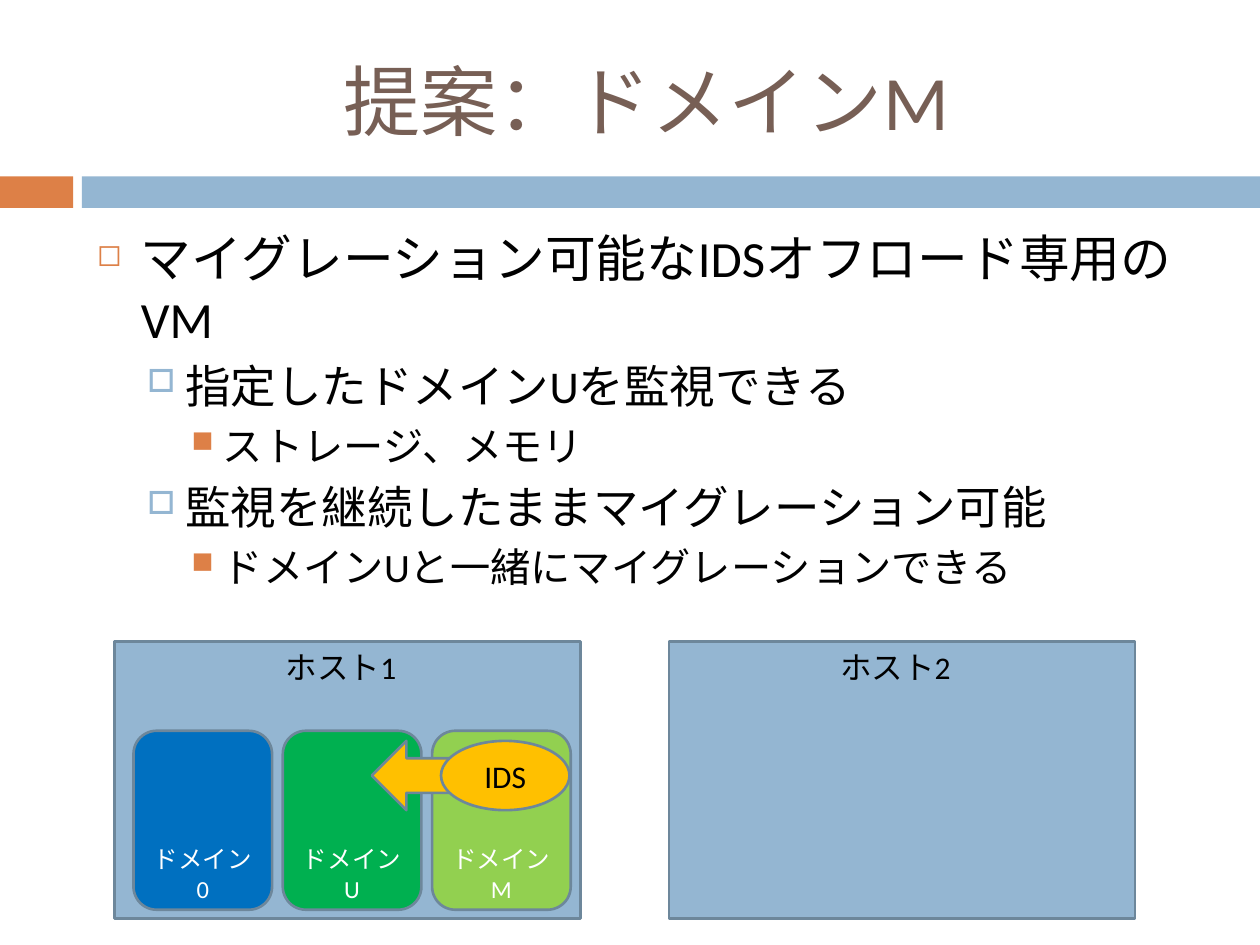
from lxml import etree
from pptx import Presentation
from pptx.dml.color import RGBColor
from pptx.enum.shapes import MSO_SHAPE
from pptx.enum.text import MSO_ANCHOR, PP_ALIGN
from pptx.oxml.ns import qn
from pptx.util import Inches, Pt

RECT, ROUND = MSO_SHAPE.RECTANGLE, MSO_SHAPE.ROUNDED_RECTANGLE
OVAL, ARROW = MSO_SHAPE.OVAL, MSO_SHAPE.RIGHT_ARROW
TOP, MID, LOW = MSO_ANCHOR.TOP, MSO_ANCHOR.MIDDLE, MSO_ANCHOR.BOTTOM
LEFT, CENTER = PP_ALIGN.LEFT, PP_ALIGN.CENTER
BLUE, ORANGE, EDGE, GOLD = "94B6D2", "DD8047", "6D879B", "FFC000"

TITLE = "提案：ドメインM"
POINTS = [
    (0, "マイグレーション可能なIDSオフロード専用のVM"),
    (1, "指定したドメインUを監視できる"),
    (2, "ストレージ、メモリ"),
    (1, "監視を継続したままマイグレーション可能"),
    (2, "ドメインUと一緒にマイグレーションできる"),
]
LEVELS = [
    dict(size=29, left=0.35, hang=0.35, gap=7, mark="◻", tint=ORANGE, scale=60),
    dict(size=26, left=0.7, hang=0.3, gap=5.5, mark="□", tint=BLUE, scale=70),
    dict(size=23, left=1, hang=0.25, gap=5, mark="■", tint=ORANGE, scale=75),
]
BANDS = [(0, 0.58, ORANGE), (0.65, 9.35, BLUE)]
HOSTS = [("ホスト1", 0.91, 2.17, 1.12), ("ホスト2", 5.31, 6.57, 1.16)]
DOMAINS = [("ドメイン0", "0070C0"), ("ドメインU", "00B050"), ("ドメインM", "92D050")]


def color(code):
    """Turn a hex string into a colour."""
    return RGBColor.from_string(code)


def write(shape, text, size=18, tint="000000", align=LEFT, anchor=TOP, new=False):
    """Put one formatted paragraph into a shape."""
    frame = shape.text_frame
    frame.word_wrap = True
    frame.vertical_anchor = anchor
    para = frame.add_paragraph() if new else frame.paragraphs[0]
    para.alignment = align
    run = para.add_run()
    run.text = text
    run.font.name = "Calibri"
    run.font.size = Pt(size)
    run.font.color.rgb = color(tint)
    return para


def box(slide, *area):
    """Add a text box at the given place in inches."""
    return slide.shapes.add_textbox(*map(Inches, area))


def draw(slide, kind, area, fill, line=EDGE):
    """Add a flat shape with a fill and an optional outline."""
    shape = slide.shapes.add_shape(kind, *map(Inches, area))
    shape.shadow.inherit = False
    shape.fill.solid()
    shape.fill.fore_color.rgb = color(fill)
    if line:
        shape.line.color.rgb = color(line)
        shape.line.width = Pt(1.5)
    else:
        shape.line.fill.background()
    return shape


def bullet(para, left, hang, gap, mark, tint, scale):
    """Give a paragraph a hanging, coloured bullet."""
    para.space_before = Pt(gap)
    props = para._p.get_or_add_pPr()
    props.set("marL", str(Inches(left)))
    props.set("indent", str(-Inches(hang)))
    hue = etree.SubElement(props, qn("a:buClr"))
    etree.SubElement(hue, qn("a:srgbClr"), val=tint)
    etree.SubElement(props, qn("a:buSzPct"), val=str(scale * 1000))
    etree.SubElement(props, qn("a:buChar"), char=mark)


def main():
    """Build the slide and save it."""
    deck = Presentation()
    deck.slide_width, deck.slide_height = Inches(10), Inches(7.5)
    slide = deck.slides.add_slide(deck.slide_layouts[6])

    for left, width, fill in BANDS:
        draw(slide, RECT, (left, 1.4, width, 0.25), fill, line=None)
    write(box(slide, 0.67, 0.25, 8.92, 1.08), TITLE, size=44, tint="775F55",
          align=CENTER, anchor=MID)

    body = box(slide, 0.67, 1.75, 8.92, 4.92)
    for spot, (level, text) in enumerate(POINTS):
        style = dict(LEVELS[level])
        para = write(body, text, size=style.pop("size"), new=spot > 0)
        para.level = level
        bullet(para, **style)

    for name, left, start, width in HOSTS:
        draw(slide, RECT, (left, 5.09, 3.7, 2.2), BLUE)
        write(box(slide, start, 5.09, width, 0.4), name)

    for spot, (name, fill) in enumerate(DOMAINS):
        tile = draw(slide, ROUND, (1.06 + 1.185 * spot, 5.8, 1.1, 1.42), fill)
        tile.text_frame.margin_bottom = 0
        write(tile, name, size=14, tint="FFFFFF", align=CENTER, anchor=LOW)

    arrow = draw(slide, ARROW, (2.95, 5.88, 0.79, 0.55), GOLD)
    arrow.rotation = 180
    oval = draw(slide, OVAL, (3.5, 5.88, 1.02, 0.55), GOLD)
    write(oval, "IDS", align=CENTER, anchor=MID)

    deck.save("out.pptx")


if __name__ == "__main__":
    main()
